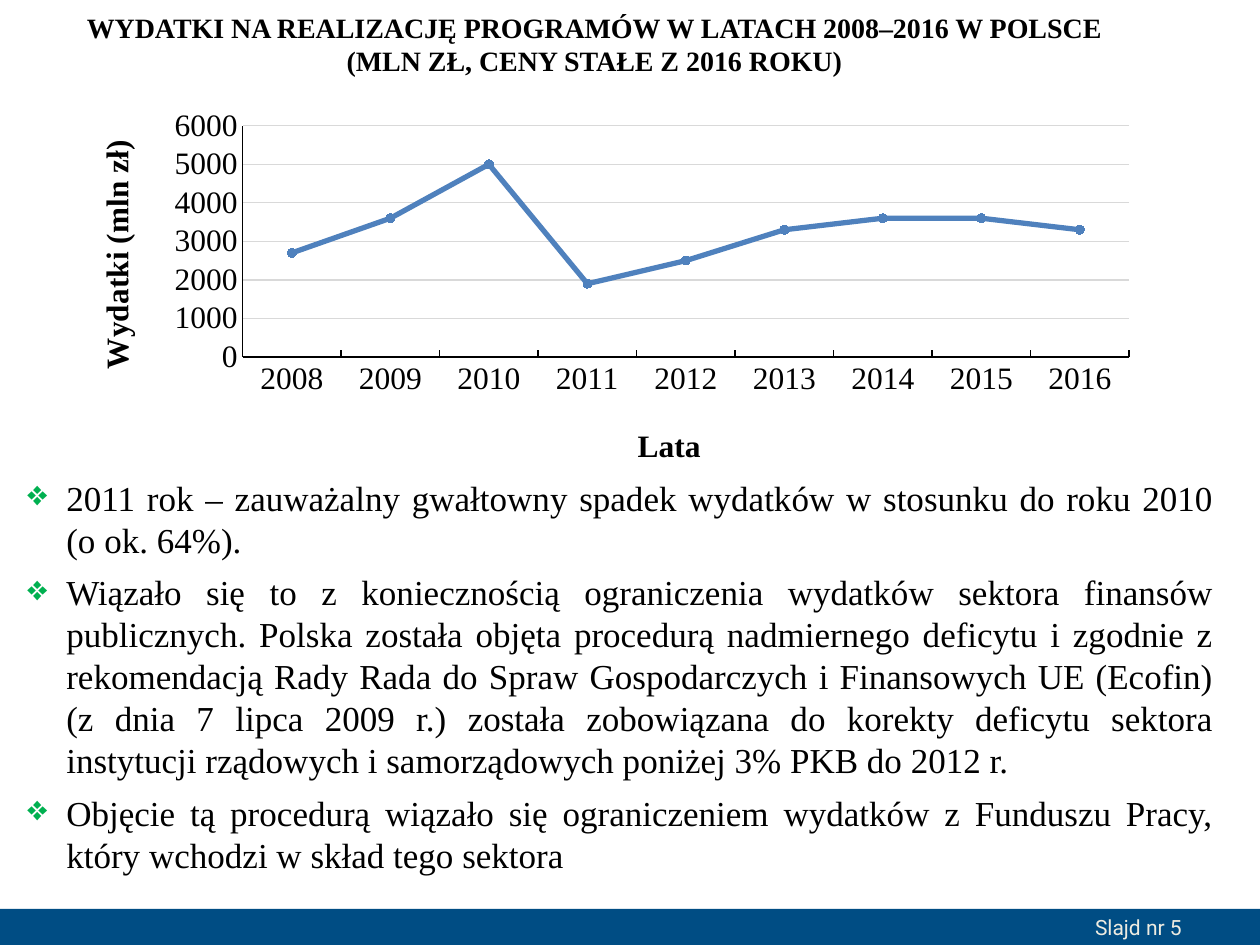
from dataclasses import dataclass

from lxml import etree
from pptx import Presentation
from pptx import util as u
from pptx.chart.data import CategoryChartData
from pptx.dml.color import RGBColor
from pptx.enum import chart as ch, shapes, text
from pptx.oxml.ns import qn

EMU_PER_PX = 914400 / 126
SERIF = "Times New Roman"
COLORS = {
    "text": "000000",
    "footer": "004D84",
    "footer_text": "EEECE1",
    "bullet": "00B050",
    "line": "4F81BD",
    "grid": "D9D9D9",
}
SPENDING = {
    "2008": 2700, "2009": 3600, "2010": 5000,
    "2011": 1900, "2012": 2500, "2013": 3300,
    "2014": 3600, "2015": 3600, "2016": 3300,
}
HEADING = (
    "WYDATKI NA REALIZACJĘ PROGRAMÓW W LATACH 2008–2016 W POLSCE "
    "(MLN ZŁ, CENY STAŁE Z 2016 ROKU)"
)
FINDINGS = [
    "2011 rok – zauważalny gwałtowny spadek wydatków w stosunku do roku 2010 (o ok. 64%).",
    "Wiązało się to z koniecznością ograniczenia wydatków sektora finansów publicznych. "
    "Polska została objęta procedurą nadmiernego deficytu i zgodnie z rekomendacją Rady "
    "Rada do Spraw Gospodarczych i Finansowych UE (Ecofin) (z dnia 7 lipca 2009 r.) "
    "została zobowiązana do korekty deficytu sektora instytucji rządowych "
    "i samorządowych poniżej 3% PKB do 2012 r.",
    "Objęcie tą procedurą wiązało się ograniczeniem wydatków z Funduszu Pracy, "
    "który wchodzi w skład tego sektora",
]


@dataclass(frozen=True)
class Box:
    left: int
    top: int
    width: int
    height: int

    def emu(self) -> list[u.Emu]:
        return [px(n) for n in (self.left, self.top, self.width, self.height)]


@dataclass(frozen=True)
class AxisTitle:
    caption: str
    x: float
    y: float
    rotation: int = 0


def px(n: int) -> u.Emu:
    return u.Emu(round(n * EMU_PER_PX))


def rgb(name: str) -> RGBColor:
    return RGBColor.from_string(COLORS[name])


def style_font(font, size: float, color="text", face=SERIF, bold=False) -> None:
    font.size, font.name, font.bold = u.Pt(size), face, bold
    font.color.rgb = rgb(color)


def add_bullet(paragraph, symbol: str, indent: int) -> None:
    props = paragraph._p.get_or_add_pPr()
    props.set("marL", str(px(indent)))
    props.set("indent", str(-px(indent)))
    tint = etree.SubElement(props, qn("a:buClr"))
    etree.SubElement(tint, qn("a:srgbClr"), val=COLORS["bullet"])
    etree.SubElement(props, qn("a:buChar"), char=symbol)


def add_text(slide, box: Box, paragraphs: list[str], *, size: float, align=None,
             color="text", face=SERIF, bold=False, bullet="", space_after=0,
             anchor=text.MSO_ANCHOR.TOP, inset=None) -> None:
    frame = slide.shapes.add_textbox(*box.emu()).text_frame
    frame.word_wrap = True
    frame.vertical_anchor = anchor
    if inset is not None:
        frame.margin_left = frame.margin_right = px(inset)
        frame.margin_top = frame.margin_bottom = px(inset)
    for i, wording in enumerate(paragraphs):
        paragraph = frame.add_paragraph() if i else frame.paragraphs[0]
        if bullet:
            add_bullet(paragraph, bullet, indent=39)
        paragraph.alignment = align
        paragraph.space_after = u.Pt(space_after)
        run = paragraph.add_run()
        run.text = wording
        style_font(run.font, size, color, face, bold)


def set_layout(layout, **values) -> None:
    manual = etree.SubElement(layout, qn("c:manualLayout"))
    for tag, value in values.items():
        etree.SubElement(manual, qn(f"c:{tag}"), val=str(value))


def style_axis(axis, title: AxisTitle, tick) -> None:
    axis.major_tick_mark, axis.minor_tick_mark = tick, ch.XL_TICK_MARK.NONE
    style_font(axis.tick_labels.font, 18)
    axis.format.line.color.rgb = rgb("text")
    axis.format.line.width = u.Pt(0.75)
    frame = axis.axis_title.text_frame
    frame._txBody.bodyPr.set("rot", str(title.rotation * 60000))
    frame._txBody.bodyPr.set("vert", "horz")
    run = frame.paragraphs[0].add_run()
    run.text = title.caption
    style_font(run.font, 18, bold=True)
    set_layout(axis.axis_title._element.find(qn("c:layout")),
               xMode="edge", yMode="edge", x=title.x, y=title.y)


def add_spending_chart(slide, box: Box) -> None:
    data = CategoryChartData()
    data.categories = list(SPENDING)
    data.add_series("Wydatki", list(SPENDING.values()))
    chart = slide.shapes.add_chart(ch.XL_CHART_TYPE.LINE_MARKERS, *box.emu(), data).chart
    chart.has_legend = chart.has_title = False
    style_font(chart.font, 18)

    years, amounts = chart.category_axis, chart.value_axis
    style_axis(years, AxisTitle("Lata", 0.53, 0.87), ch.XL_TICK_MARK.INSIDE)
    style_axis(amounts, AxisTitle("Wydatki (mln zł)", 0.03, 0.11, -90), ch.XL_TICK_MARK.NONE)
    amounts.minimum_scale, amounts.maximum_scale, amounts.major_unit = 0, 6000, 1000
    amounts.has_major_gridlines = True
    amounts.major_gridlines.format.line.color.rgb = rgb("grid")
    amounts.major_gridlines.format.line.width = u.Pt(0.75)

    chart.plots[0].vary_by_categories = False
    spending = chart.plots[0].series[0]
    spending.smooth = False
    spending.format.line.color.rgb = rgb("line")
    spending.format.line.width = u.Pt(3)
    marker = spending.marker
    marker.style, marker.size = ch.XL_MARKER_STYLE.CIRCLE, 5
    marker.format.fill.solid()
    marker.format.fill.fore_color.rgb = rgb("line")
    marker.format.line.color.rgb = rgb("line")

    plot_area = chart._chartSpace.find(f".//{qn('c:plotArea')}")
    for old in plot_area.findall(qn("c:layout")):
        plot_area.remove(old)
    layout = etree.Element(qn("c:layout"))
    plot_area.insert(0, layout)
    set_layout(layout, layoutTarget="inner", xMode="edge", yMode="edge",
               x=0.17, y=0.08, w=0.82, h=0.62)


def add_footer(slide) -> None:
    band = slide.shapes.add_shape(shapes.MSO_SHAPE.RECTANGLE, *Box(0, 909, 1260, 36).emu())
    band.shadow.inherit = False
    band.fill.solid()
    band.fill.fore_color.rgb = rgb("footer")
    band.line.fill.background()
    add_text(slide, Box(1095, 901, 180, 53), ["Slajd nr 5"], size=12, face="Roboto",
             color="footer_text", anchor=text.MSO_ANCHOR.MIDDLE, inset=0)


def main() -> None:
    deck = Presentation()
    deck.slide_width, deck.slide_height = px(1260), px(945)
    slide = deck.slides.add_slide(deck.slide_layouts[6])
    add_footer(slide)
    add_spending_chart(slide, Box(59, 96, 1081, 377))
    add_text(slide, Box(59, 4, 1071, 81), [HEADING], size=16, bold=True,
             align=text.PP_ALIGN.CENTER)
    add_text(slide, Box(15, 470, 1211, 416), FINDINGS, size=20, bullet="❖",
             space_after=6, align=text.PP_ALIGN.JUSTIFY)
    deck.save("out.pptx")


if __name__ == "__main__":
    main()
